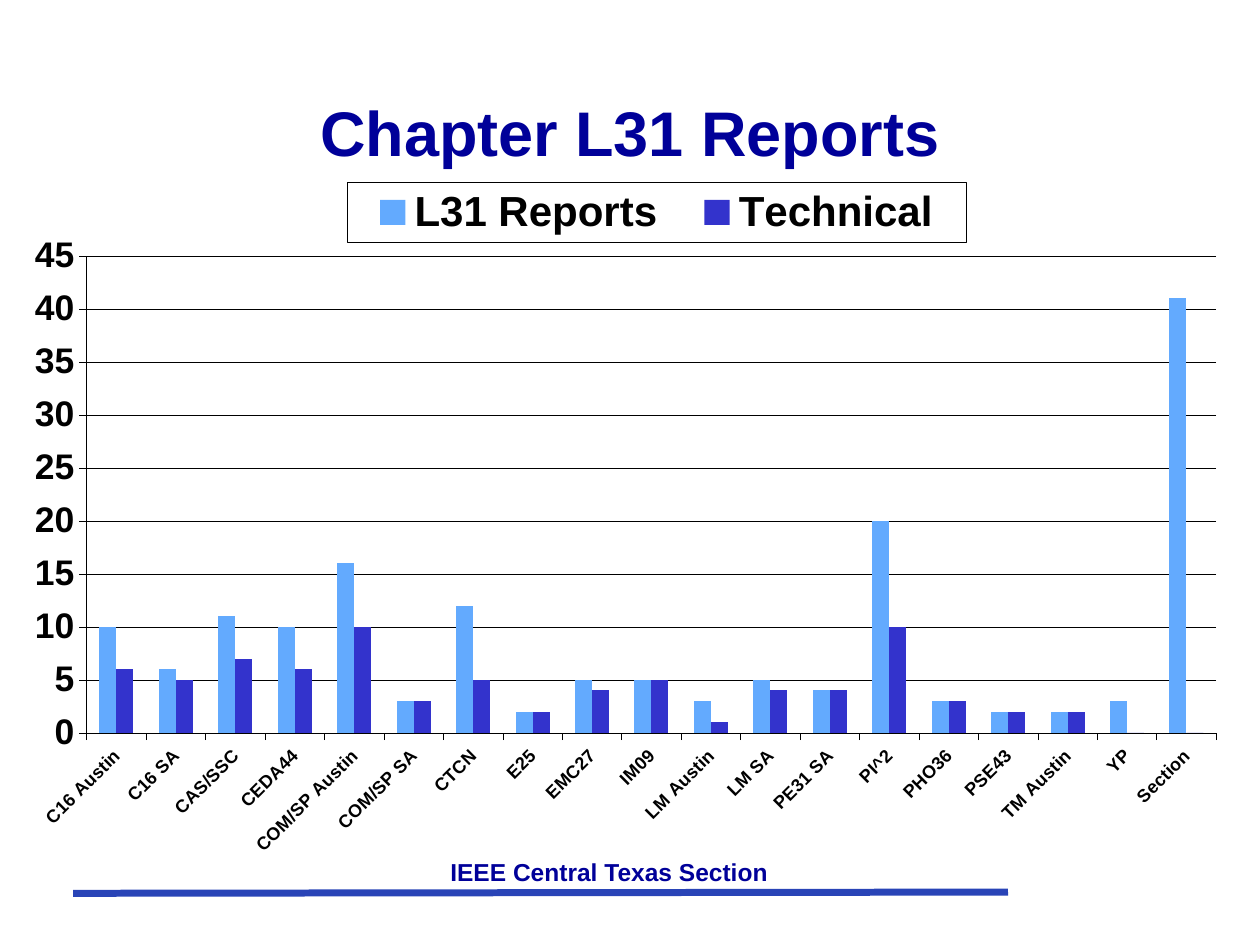
from dataclasses import dataclass

from pptx import Presentation
from pptx.chart.data import CategoryChartData
from pptx.dml.color import RGBColor
from pptx.enum.chart import XL_CHART_TYPE, XL_LEGEND_POSITION, XL_TICK_LABEL_POSITION, XL_TICK_MARK
from pptx.enum.text import MSO_ANCHOR, PP_ALIGN
from pptx.oxml import parse_xml
from pptx.oxml.ns import nsdecls, qn
from pptx.util import Inches, Pt


@dataclass(frozen=True)
class Theme:
    font: str = "Arial"
    navy: str = "000099"
    rule: str = "2944B7"
    ink: str = "000000"
    series: tuple = ("63AAFE", "3333CC")
    title: float = 36
    footer: float = 14
    legend: float = 24
    values: float = 20.3
    categories: float = 10.3
    hairline: float = 0.25


REPORTS = [  # chapter, L31 reports, technical
    ("C16 Austin", 10, 6), ("C16 SA", 6, 5), ("CAS/SSC", 11, 7),
    ("CEDA44", 10, 6), ("COM/SP Austin", 16, 10), ("COM/SP SA", 3, 3),
    ("CTCN", 12, 5), ("E25", 2, 2), ("EMC27", 5, 4), ("IM09", 5, 5),
    ("LM Austin", 3, 1), ("LM SA", 5, 4), ("PE31 SA", 4, 4),
    ("PI^2", 20, 10), ("PHO36", 3, 3), ("PSE43", 2, 2),
    ("TM Austin", 2, 2), ("YP", 3, 0), ("Section", 41, 0),
]


class SlideBuilder:
    """Places elements on a grid of one-inch columns and rows."""

    def __init__(self, slide, theme):
        self.slide = slide
        self.theme = theme

    def style(self, font, size, color):
        font.name = self.theme.font
        font.size = Pt(size)
        font.bold = True
        font.color.rgb = RGBColor.from_string(color)

    def outline(self, line, color, width):
        line.color.rgb = RGBColor.from_string(color)
        line.width = Pt(width)

    def rule(self, start, end):
        ends = [Inches(n) for n in (*start, *end)]
        rule = self.slide.shapes.add_connector(1, *ends)
        self.outline(rule.line, self.theme.rule, 4)
        rule._element.spPr.append(parse_xml(f"<a:effectLst {nsdecls('a')}/>"))

    def text(self, words, box, size, anchor=MSO_ANCHOR.TOP):
        frame = self.slide.shapes.add_textbox(*map(Inches, box)).text_frame
        frame.word_wrap = True
        frame.vertical_anchor = anchor
        paragraph = frame.paragraphs[0]
        paragraph.text = words
        paragraph.alignment = PP_ALIGN.CENTER
        self.style(paragraph.font, size, self.theme.navy)

    def fix_layout(self, part, index, shares, inner=False):
        """Pin a chart part to shares of the chart's size."""
        for old in part.findall(qn("c:layout")):
            part.remove(old)
        target = '<c:layoutTarget val="inner"/>' if inner else ""
        modes = "".join(f'<c:{axis}Mode val="edge"/>' for axis in "xy")
        sizes = "".join(f'<c:{side} val="{share}"/>' for side, share in zip("xywh", shares))
        part.insert(index, parse_xml(
            f"<c:layout {nsdecls('c')}><c:manualLayout>{target}{modes}{sizes}"
            "</c:manualLayout></c:layout>"))

    def axis(self, axis, size):
        axis.major_tick_mark = XL_TICK_MARK.OUTSIDE
        axis.minor_tick_mark = XL_TICK_MARK.NONE
        self.style(axis.tick_labels.font, size, self.theme.ink)
        self.outline(axis.format.line, self.theme.ink, self.theme.hairline)

    def column_chart(self, names, rows, box, plot_shares, legend_shares):
        theme = self.theme
        categories, *columns = zip(*rows)
        data = CategoryChartData()
        data.categories = categories
        for name, values in zip(names, columns):
            data.add_series(name, values)
        chart = self.slide.shapes.add_chart(
            XL_CHART_TYPE.COLUMN_CLUSTERED, *map(Inches, box), data).chart
        chart.has_title = False
        self.style(chart.font, theme.legend, theme.ink)

        # Columns
        plot = chart.plots[0]
        plot.gap_width = 75 * len(names)
        plot.overlap = 0
        plot.vary_by_categories = False
        for series, color in zip(plot.series, theme.series):
            series.format.fill.solid()
            series.format.fill.fore_color.rgb = RGBColor.from_string(color)
        self.fix_layout(plot._element.getparent(), 0, plot_shares, inner=True)

        # Axes
        self.axis(chart.category_axis, theme.categories)
        chart.category_axis.tick_label_position = XL_TICK_LABEL_POSITION.LOW
        labels = chart.category_axis._element.find(qn("c:txPr"))
        labels.find(qn("a:bodyPr")).set("rot", "-2700000")
        value_axis = chart.value_axis
        self.axis(value_axis, theme.values)
        value_axis.minimum_scale, value_axis.maximum_scale = 0, 45
        value_axis.major_unit = 5
        self.outline(value_axis.major_gridlines.format.line, theme.ink, theme.hairline)

        # Legend
        chart.has_legend = True
        legend = chart.legend
        legend.position = XL_LEGEND_POSITION.TOP
        legend.include_in_layout = False
        self.style(legend.font, theme.legend, theme.ink)
        self.fix_layout(legend._element, 1, legend_shares)
        legend._element.find(qn("c:txPr")).addprevious(parse_xml(
            f"<c:spPr {nsdecls('c', 'a')}><a:noFill/>"
            f'<a:ln w="{Pt(theme.hairline)}"><a:solidFill><a:srgbClr val="{theme.ink}"/>'
            "</a:solidFill></a:ln></c:spPr>"))


def main():
    deck = Presentation()
    deck.slide_width, deck.slide_height = Inches(10), Inches(7.5)
    theme = Theme()
    page = SlideBuilder(deck.slides.add_slide(deck.slide_layouts[6]), theme)

    # Footer
    page.rule((0.58, 7.09), (8, 7.08))
    page.text("IEEE Central Texas Section", (1.75, 6.75, 6.17, 0.33), theme.footer)

    # Title
    page.text("Chapter L31 Reports", (0.75, 0.42, 8.5, 1.25), theme.title, MSO_ANCHOR.MIDDLE)

    # Reports by chapter
    page.column_chart(("L31 Reports", "Technical"), REPORTS, (0, 1.35, 9.83, 5.69),
                      plot_shares=(0.07, 0.12, 0.912, 0.665),
                      legend_shares=(0.28, 0.017, 0.5, 0.084))

    deck.save("out.pptx")


if __name__ == "__main__":
    main()
